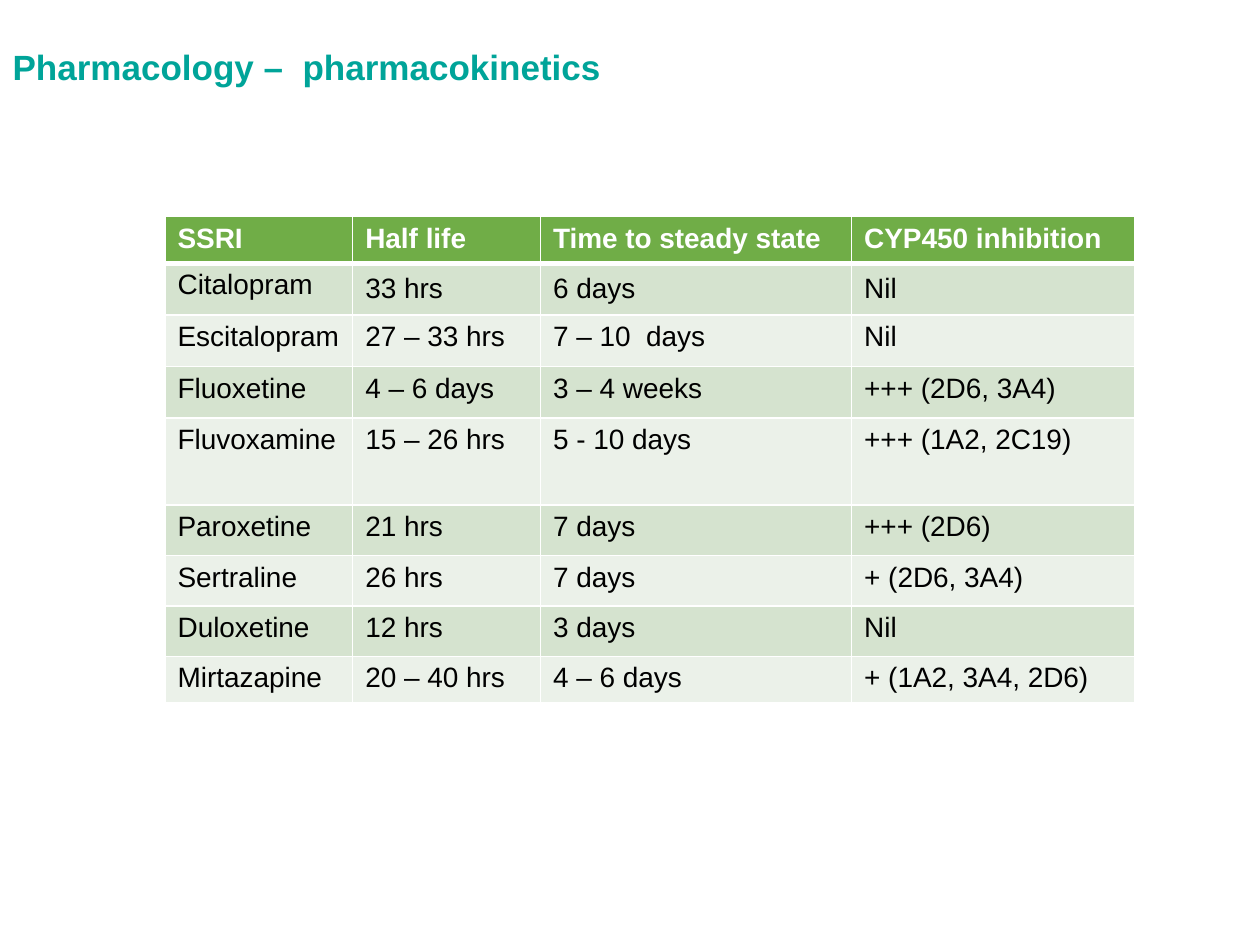
"""Build a slide comparing the pharmacokinetics of antidepressants."""
from lxml import etree
from pptx import Presentation
from pptx.dml.color import RGBColor
from pptx.enum.text import MSO_ANCHOR, PP_ALIGN
from pptx.oxml.ns import qn
from pptx.util import Inches, Pt

LEFT = PP_ALIGN.LEFT
TOP, MIDDLE = MSO_ANCHOR.TOP, MSO_ANCHOR.MIDDLE
TITLE_ONLY = 5

TITLE = "Pharmacology –  pharmacokinetics"
ROWS = [
    ("SSRI", "Half life", "Time to steady state", "CYP450 inhibition"),
    ("Citalopram", "33 hrs", "6 days", "Nil"),
    ("Escitalopram", "27 – 33 hrs", "7 – 10  days", "Nil"),
    ("Fluoxetine", "4 – 6 days", "3 – 4 weeks", "+++ (2D6, 3A4)"),
    ("Fluvoxamine", "15 – 26 hrs", "5 - 10 days", "+++ (1A2, 2C19)"),
    ("Paroxetine", "21 hrs", "7 days", "+++ (2D6)"),
    ("Sertraline", "26 hrs", "7 days", "+ (2D6, 3A4)"),
    ("Duloxetine", "12 hrs", "3 days", "Nil"),
    ("Mirtazapine", "20 – 40 hrs", "4 – 6 days", "+ (1A2, 3A4, 2D6)"),
]
COLUMN_WIDTHS = [1.49, 1.49, 2.47, 2.25]
ROW_HEIGHTS = [0.37, 0.41, 0.41, 0.41, 0.69, 0.4, 0.4, 0.4, 0.37]
THEME = {
    "font": "Arial", "title_size": 20, "table_size": 16,
    "title": "00A499", "header": "70AD47", "bands": ["EBF1E9", "D5E3CF"],
    "light": "FFFFFF", "dark": "000000", "border": 1, "header_border": 3,
}


def format_paragraph(paragraph, size, color, bold):
    paragraph.alignment = LEFT
    font = paragraph.font
    font.name, font.size, font.bold = THEME["font"], Pt(size), bold
    font.color.rgb = RGBColor.from_string(color)


def set_borders(cell, top, bottom):
    properties = cell._tc.get_or_add_tcPr()
    widths = {"lnL": THEME["border"], "lnR": THEME["border"], "lnT": top, "lnB": bottom}
    for position, (side, width) in enumerate(widths.items()):
        line = etree.Element(qn(f"a:{side}"), w=str(Pt(width)))
        fill = etree.SubElement(line, qn("a:solidFill"))
        etree.SubElement(fill, qn("a:srgbClr"), val=THEME["light"])
        properties.insert(position, line)


def add_title(slide):
    title = slide.shapes.title
    title.left, title.top = Inches(0), Inches(0.31)
    title.width, title.height = Inches(8.95), Inches(0.44)
    frame = title.text_frame
    frame.text = TITLE
    frame.word_wrap = True
    frame.vertical_anchor = TOP
    format_paragraph(frame.paragraphs[0], THEME["title_size"], THEME["title"], True)


def format_cell(cell, row, column):
    is_header = row == 0
    fill = THEME["header"] if is_header else THEME["bands"][row % 2]
    cell.fill.solid()
    cell.fill.fore_color.rgb = RGBColor.from_string(fill)
    cell.vertical_anchor = MIDDLE if row == 1 and column > 0 else TOP
    set_borders(
        cell,
        THEME["header_border"] if row == 1 else THEME["border"],
        THEME["header_border"] if is_header else THEME["border"],
    )
    color = THEME["light"] if is_header else THEME["dark"]
    format_paragraph(cell.text_frame.paragraphs[0], THEME["table_size"], color, is_header)


def add_drug_table(slide):
    table = slide.shapes.add_table(
        len(ROWS), len(COLUMN_WIDTHS), Inches(1.31), Inches(1.72),
        Inches(sum(COLUMN_WIDTHS)), Inches(sum(ROW_HEIGHTS)),
    ).table
    for column, width in zip(table.columns, COLUMN_WIDTHS):
        column.width = Inches(width)
    for row, height in zip(table.rows, ROW_HEIGHTS):
        row.height = Inches(height)
    for row, values in enumerate(ROWS):
        for column, value in enumerate(values):
            cell = table.cell(row, column)
            cell.text = value
            format_cell(cell, row, column)


def main():
    presentation = Presentation()
    presentation.slide_width, presentation.slide_height = Inches(10), Inches(7.5)
    slide = presentation.slides.add_slide(presentation.slide_layouts[TITLE_ONLY])
    add_title(slide)
    add_drug_table(slide)
    presentation.save("out.pptx")


if __name__ == "__main__":
    main()
